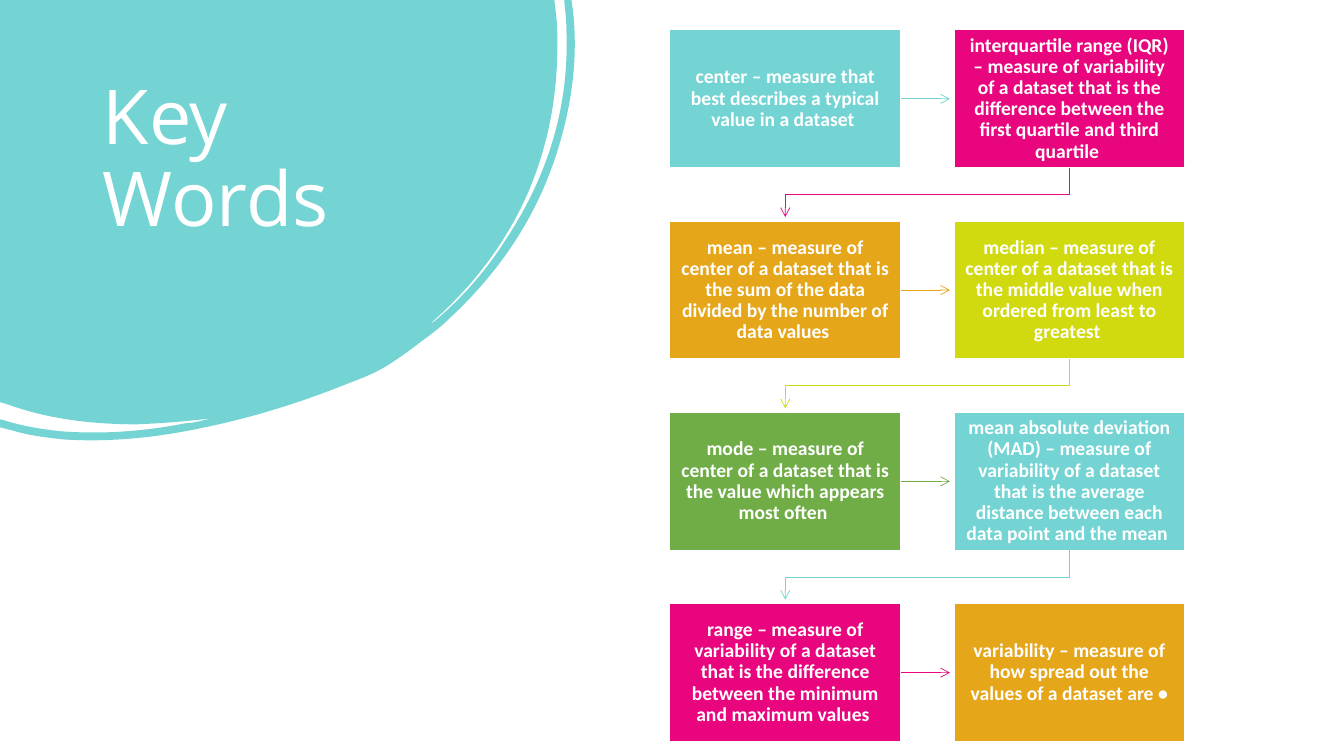
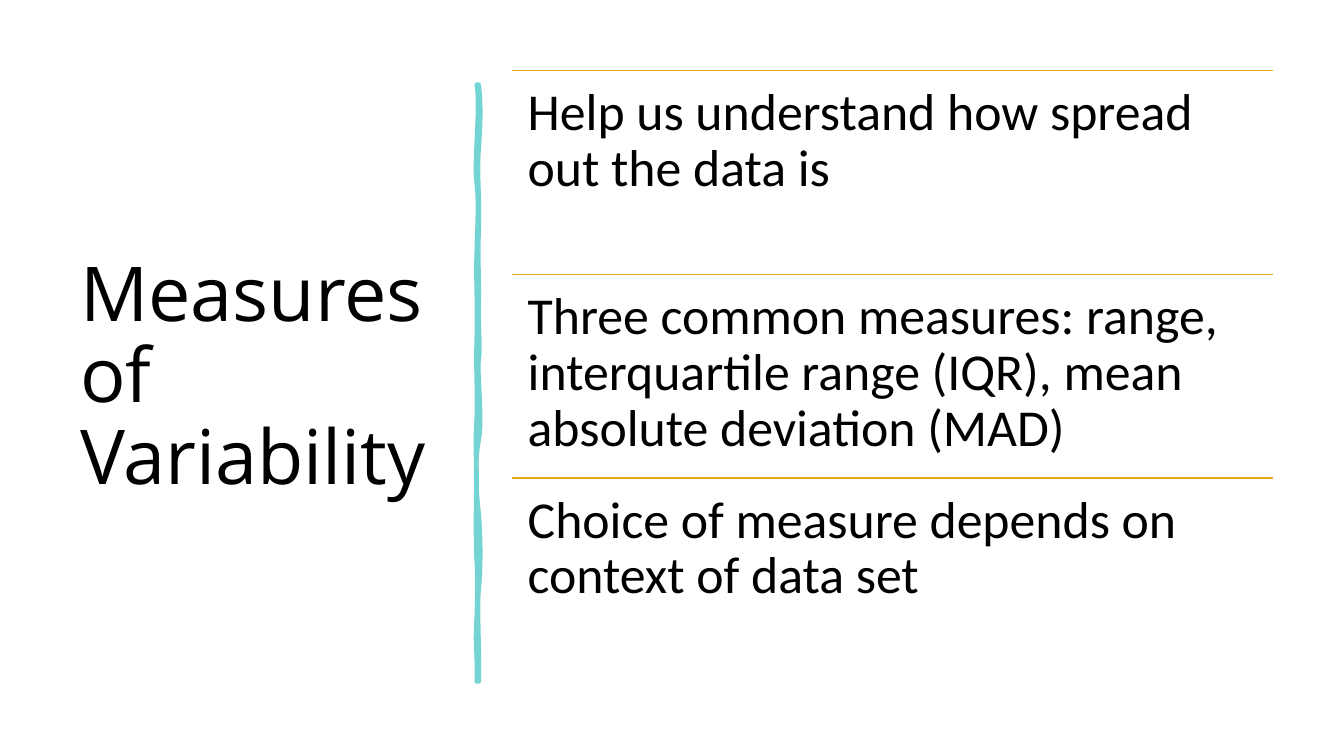
from dataclasses import dataclass

from lxml import etree
from pptx import Presentation
from pptx.dml.color import RGBColor
from pptx.enum.shapes import MSO_CONNECTOR, MSO_SHAPE
from pptx.enum.text import MSO_ANCHOR, PP_ALIGN
from pptx.oxml.ns import qn
from pptx.util import Cm, Pt

STRAIGHT = MSO_CONNECTOR.STRAIGHT
RECTANGLE = MSO_SHAPE.RECTANGLE
TOP, MIDDLE = MSO_ANCHOR.TOP, MSO_ANCHOR.MIDDLE
LEFT, CENTER = PP_ALIGN.LEFT, PP_ALIGN.CENTER
RIGHT_SIDE = 3


@dataclass(frozen=True)
class Theme:
    teal: str = "74D4D3"
    magenta: str = "E9057E"
    gold: str = "E5A61A"
    lime: str = "D1DA0E"
    green: str = "70AD47"
    white: str = "FFFFFF"
    black: str = "000000"
    title_font: str = "Open Sans"
    body_font: str = "Calibri"
    title_size: int = 54
    point_size: int = 37
    card_size: int = 14
    line_spacing: float = 0.9


THEME = Theme()
CARD_COLORS = (THEME.teal, THEME.magenta, THEME.gold, THEME.lime, THEME.green)

KEY_WORDS = (
    "center – measure that best describes a typical value in a dataset ",
    "interquartile range (IQR) – measure of variability of a dataset that is "
    "the difference between the first quartile and third quartile ",
    "mean – measure of center of a dataset that is the sum of the data "
    "divided by the number of data values ",
    "median – measure of center of a dataset that is the middle value when "
    "ordered from least to greatest ",
    "mode – measure of center of a dataset that is the value which appears "
    "most often ",
    "mean absolute deviation (MAD) – measure of variability of a dataset that "
    "is the average distance between each data point and the mean ",
    "range – measure of variability of a dataset that is the difference "
    "between the minimum and maximum values ",
    "variability – measure of how spread out the values of a dataset are •",
)
VARIABILITY_POINTS = (
    "Help us understand how spread out the data is",
    "Three common measures: range, interquartile range (IQR), mean absolute "
    "deviation (MAD)",
    "Choice of measure depends on context of data set",
)

# Outlines: two numbers are a corner, six are a curve; one unit is 0.0254 cm
OUTLINE_UNIT = Cm(0.0254)
BLOB = (
    (0, 0), (550, 0), (552, 17),
    (553, 26, 553, 36, 553, 45), (553, 101, 542, 154, 518, 204),
    (496, 249, 465, 288, 427, 321), (429, 321, 430, 319, 432, 318),
    (459, 295, 482, 269, 501, 239), (543, 176, 565, 107, 562, 30),
    (562, 21, 561, 12, 560, 3), (560, 0), (567, 0), (568, 7),
    (574, 54, 568, 102, 553, 150), (533, 214, 497, 268, 448, 314),
    (439, 323, 429, 331, 419, 338), (409, 346, 399, 353, 387, 361),
    (375, 369, 360, 375, 344, 381), (299, 399, 252, 414, 203, 424),
    (157, 434, 110, 439, 63, 436), (45, 434, 28, 432, 12, 427),
    (0, 424), (0, 416), (4, 417),
    (23, 423, 42, 426, 61, 428), (103, 431, 143, 428, 184, 420),
    (189, 420, 193, 419, 198, 418), (202, 417, 206, 416, 210, 415),
    (186, 418, 161, 420, 136, 421), (92, 421, 48, 416, 7, 401), (0, 399),
)
BRUSH_STROKE = (
    (475, 84),
    (477, 102, 477, 119, 475, 146), (473, 173, 476, 195, 475, 226),
    (474, 257, 475, 262, 475, 294), (474, 325, 477, 342, 475, 356),
    (473, 370, 479, 414, 475, 436), (471, 457, 472, 484, 475, 510),
    (477, 536, 477, 564, 475, 584), (473, 603, 476, 650, 475, 676),
    (474, 676, 473, 676, 473, 676), (474, 646, 471, 644, 473, 613),
    (474, 583, 474, 570, 473, 557), (472, 544, 472, 495, 473, 477),
    (473, 459, 471, 445, 473, 415), (474, 386, 472, 373, 473, 335),
    (474, 298, 472, 281, 473, 250), (474, 218, 475, 200, 473, 181),
    (470, 163, 477, 104, 473, 84),
)


def rgb(color):
    return RGBColor.from_string(color)


def set_all(target, values):
    for name, value in values.items():
        setattr(target, name, value)


def style_line(shape, color, width, arrow=False):
    shape.line.color.rgb = rgb(color)
    shape.line.width = Pt(width)
    if arrow:
        outline = shape._element.spPr.find(qn("a:ln"))
        etree.SubElement(outline, qn("a:tailEnd"), type="arrow")


def write(shape, text, size, color, font, bold=False, align=LEFT,
          anchor=TOP, inset=(0.25, 0.13)):
    """Put one formatted paragraph into a shape or text box."""
    across, down = (Cm(value) for value in inset)
    set_all(shape.text_frame, {
        "word_wrap": True, "vertical_anchor": anchor,
        "margin_left": across, "margin_right": across,
        "margin_top": down, "margin_bottom": down,
    })
    paragraph = shape.text_frame.paragraphs[0]
    paragraph.text = text
    set_all(paragraph, {"alignment": align,
                        "line_spacing": THEME.line_spacing})
    set_all(paragraph.font, {"size": Pt(size), "name": font, "bold": bold})
    paragraph.font.color.rgb = rgb(color)


def add_text(slide, box, text, size, color, font, **layout):
    frame = slide.shapes.add_textbox(*(Cm(value) for value in box))
    write(frame, text, size, color, font, **layout)


def add_title(slide, box, text, color, anchor=TOP):
    add_text(slide, box, text, THEME.title_size, color, THEME.title_font,
             anchor=anchor)


def add_line(slide, start, end, color, width, arrow=False):
    ends = (Cm(value) for value in (*start, *end))
    connector = slide.shapes.add_connector(STRAIGHT, *ends)
    style_line(connector, color, width, arrow)
    etree.SubElement(connector._element.spPr, qn("a:effectLst"))
    return connector


def add_outline(slide, points, scale=1.0, close=True):
    builder = slide.shapes.build_freeform(*points[0], scale=scale)
    builder.add_line_segments(points[1:], close=close)
    shape = builder.convert_to_shape()
    shape.shadow.inherit = False
    return shape


def bend_segments(shape, outline):
    """Swap the straight segments for curves where the outline has them."""
    left = min(step[-2] for step in outline)
    top = min(step[-1] for step in outline)
    segments = list(shape._element.spPr.iter(qn("a:lnTo")))
    for segment, step in zip(segments, outline[1:]):
        if len(step) == 2:
            continue
        curve = etree.Element(qn("a:cubicBezTo"))
        for x, y in zip(step[::2], step[1::2]):
            etree.SubElement(curve, qn("a:pt"), x=str(x - left),
                             y=str(y - top))
        segment.getparent().replace(segment, curve)


def add_curved_shape(slide, outline, color, line_width=0):
    corners = [step[-2:] for step in outline]
    shape = add_outline(slide, corners, OUTLINE_UNIT)
    bend_segments(shape, outline)
    shape.fill.solid()
    shape.fill.fore_color.rgb = rgb(color)
    if line_width:
        style_line(shape, color, line_width)
    else:
        shape.line.fill.background()


def add_step_arrow(slide, points, color):
    arrow = add_outline(slide, [(Cm(x), Cm(y)) for x, y in points],
                        close=False)
    arrow.fill.background()
    style_line(arrow, color, 0.5, arrow=True)


def add_card(slide, box, text, color):
    card = slide.shapes.add_shape(RECTANGLE, *(Cm(value) for value in box))
    card.shadow.inherit = False
    card.fill.solid()
    card.fill.fore_color.rgb = rgb(color)
    style_line(card, THEME.white, 1)
    write(card, text, THEME.card_size, THEME.white, THEME.body_font,
          bold=True, align=CENTER, anchor=MIDDLE, inset=(0.28, 0.3))
    return card


def add_card_flow(slide, texts):
    """Lay cards out in two columns, each pointing to the next."""
    left, top, width, height, gap = 16.88, 0.75, 5.82, 3.48, 1.34
    reach = gap - 0.1
    for i, text in enumerate(texts):
        row, column = divmod(i, 2)
        x = left + column * (width + gap)
        y = top + row * (height + gap)
        color = CARD_COLORS[i % len(CARD_COLORS)]
        card = add_card(slide, (x, y, width, height), text, color)
        if i == len(texts) - 1:
            continue
        if column == 0:
            edge, middle = x + width, y + height / 2
            arrow = add_line(slide, (edge, middle), (edge + reach, middle),
                             color, 0.5, arrow=True)
            arrow.begin_connect(card, RIGHT_SIDE)
        else:
            start, end, base = x + width / 2, left + width / 2, y + height
            bend = base + gap / 2
            add_step_arrow(slide, ((start, base), (start, bend), (end, bend),
                                   (end, base + reach)), color)


def add_ruled_list(slide, texts):
    """Stack equal rows, each under a thin rule."""
    left, top, width, row_height = 12.91, 1.78, 19.17, 5.13
    for i, text in enumerate(texts):
        y = top + i * row_height
        add_line(slide, (left, y), (left + width, y), THEME.gold, 1)
        add_text(slide, (left, y, width, row_height), text, THEME.point_size,
                 THEME.black, THEME.body_font, inset=(0.39, 0.39))


def main():
    deck = Presentation()
    deck.slide_width, deck.slide_height = Cm(33.87), Cm(19.05)
    blank = deck.slide_layouts[6]

    # Key words
    key_words = deck.slides.add_slide(blank)
    add_curved_shape(key_words, BLOB, THEME.teal)
    add_title(key_words, (2.34, 1.87, 8.94, 5.64), "Key Words", THEME.white)
    add_card_flow(key_words, KEY_WORDS)

    # Measures of variability
    variability = deck.slides.add_slide(blank)
    add_title(variability, (1.77, 1.77, 9.5, 15.52),
              "Measures of Variability", THEME.black, anchor=MIDDLE)
    add_curved_shape(variability, BRUSH_STROKE, THEME.teal, line_width=3.25)
    add_ruled_list(variability, VARIABILITY_POINTS)

    deck.save("out.pptx")


if __name__ == "__main__":
    main()
